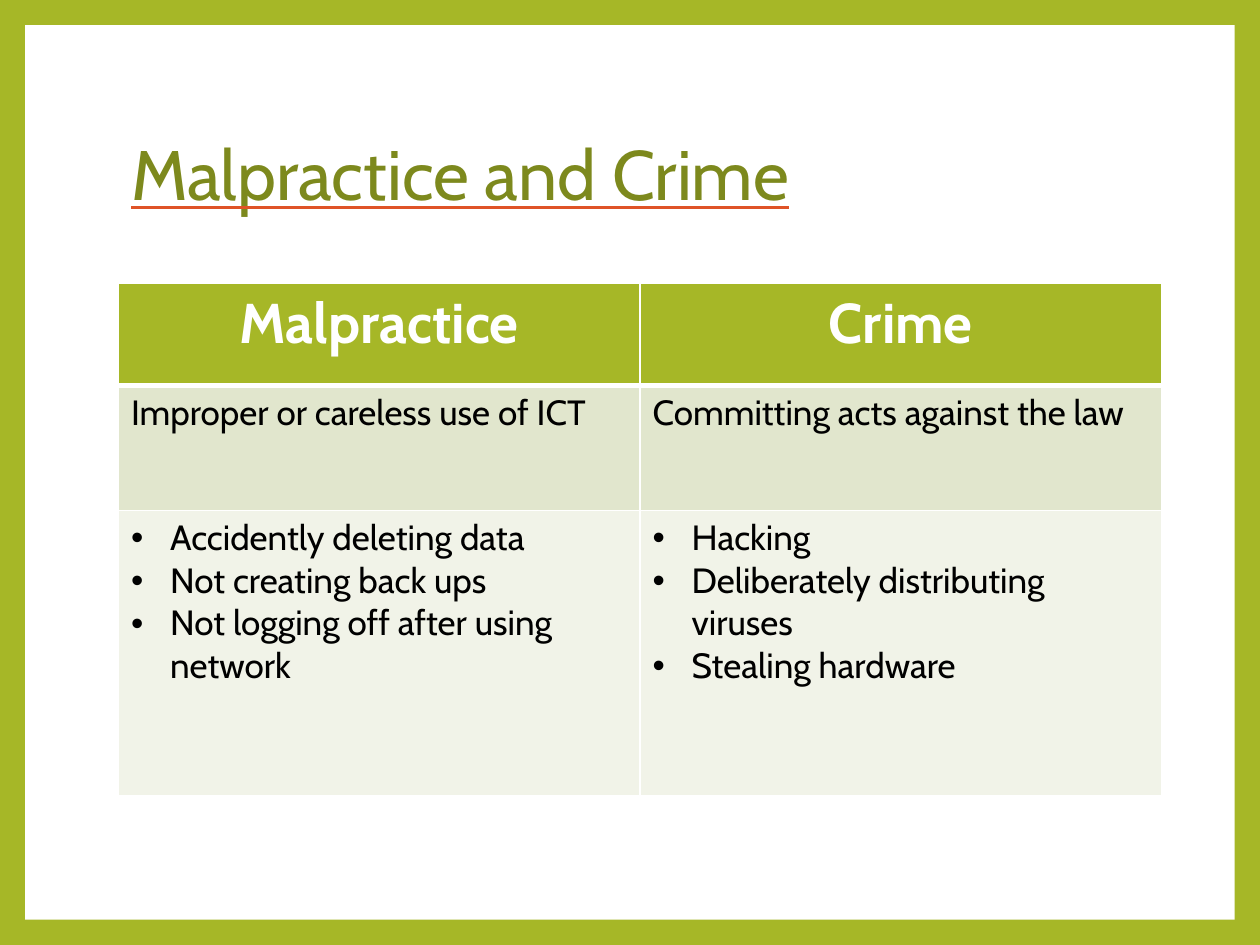
from dataclasses import dataclass

from lxml.etree import SubElement
from pptx import Presentation
from pptx.dml.color import RGBColor as Rgb
from pptx.enum.shapes import MSO_SHAPE as Shape
from pptx.enum.text import MSO_ANCHOR as Anchor, MSO_AUTO_SIZE as AutoSize, PP_ALIGN as Align
from pptx.oxml import parse_xml
from pptx.oxml.ns import nsdecls, qn
from pptx.util import Inches, Pt


@dataclass(frozen=True)
class Theme:
    """Colours, font and type sizes of the slide."""
    font: str = "Cabin"
    green: str = "A6B727"
    olive: str = "7D891D"
    orange: str = "DF5327"
    white: str = "FFFFFF"
    black: str = "000000"
    definition_fill: str = "E1E6CD"
    example_fill: str = "F1F3E8"
    title_size: int = 40
    header_size: int = 32
    body_size: int = 20


THEME = Theme()
HEADERS = ["Malpractice", "Crime"]
DEFINITIONS = ["Improper or careless use of ICT", "Committing acts against the law"]
EXAMPLES = [
    ["Accidently deleting data", "Not creating back ups", "Not logging off after using network"],
    ["Hacking", "Deliberately distributing viruses", "Stealing hardware"],
]


def paint(fill, colour):
    """Give a fill one solid colour."""
    fill.solid()
    fill.fore_color.rgb = Rgb.from_string(colour)


def add_run(paragraph, text, size, colour, bold=False):
    """Append a formatted run to a paragraph and return it."""
    run = paragraph.add_run()
    run.text = text
    run.font.name = THEME.font
    run.font.size = Pt(size)
    run.font.bold = bold
    run.font.color.rgb = Rgb.from_string(colour)
    return run


def add_frame(slide):
    """Set a white panel on the green background, behind the title."""
    paint(slide.background.fill, THEME.green)
    panel = slide.shapes.add_shape(
        Shape.RECTANGLE, Inches(0.2), Inches(0.2), Inches(9.6), Inches(7.1))
    panel.shadow.inherit = False
    paint(panel.fill, THEME.white)
    panel.line.fill.background()
    slide.shapes.title.element.addprevious(panel.element)


def write_title(slide, text):
    """Place the title and underline it in orange."""
    title = slide.shapes.title
    title.left, title.top = Inches(0.94), Inches(0.67)
    title.width, title.height = Inches(8.1), Inches(1.48)
    frame = title.text_frame
    frame.word_wrap = True
    frame.auto_size = AutoSize.NONE
    frame.vertical_anchor = Anchor.MIDDLE
    paragraph = frame.paragraphs[0]
    paragraph.alignment = Align.LEFT
    paragraph.line_spacing = 0.9
    run = add_run(paragraph, text, THEME.title_size, THEME.olive)
    run.font.underline = True
    underline = parse_xml(
        f'<a:uFill {nsdecls("a")}><a:solidFill><a:srgbClr val="{THEME.orange}"/>'
        '</a:solidFill></a:uFill>')
    run.font.fill
    run.font._element.find(qn("a:solidFill")).addnext(underline)


def add_bullet(paragraph):
    """Give a paragraph a hanging round bullet."""
    properties = paragraph._p.get_or_add_pPr()
    indent = Inches(0.31)
    properties.set("marL", str(indent))
    properties.set("indent", str(-indent))
    SubElement(properties, qn("a:buFont"), typeface="Arial")
    SubElement(properties, qn("a:buChar"), char="•")


def style_cell(cell, fill, top=1, bottom=1):
    """Draw white borders round a cell and fill it."""
    properties = cell._tc.get_or_add_tcPr()
    for side, width in {"L": 1, "R": 1, "T": top, "B": bottom}.items():
        border = SubElement(properties, qn(f"a:ln{side}"), w=str(Pt(width)))
        solid = SubElement(border, qn("a:solidFill"))
        SubElement(solid, qn("a:srgbClr"), val=THEME.white)
    paint(cell.fill, fill)


def write_examples(cell, examples):
    """List the examples as bullets in a cell."""
    frame = cell.text_frame
    for index, example in enumerate(examples):
        paragraph = frame.add_paragraph() if index else frame.paragraphs[0]
        add_bullet(paragraph)
        add_run(paragraph, example, THEME.body_size, THEME.black)


def add_comparison(slide):
    """Build the table that sets malpractice against crime."""
    table = slide.shapes.add_table(
        3, 2, Inches(0.94), Inches(2.25), Inches(8.28), Inches(4.07)).table
    for row, height in zip(table.rows, (0.81, 0.99, 2.27)):
        row.height = Inches(height)
    for column, content in enumerate(zip(HEADERS, DEFINITIONS, EXAMPLES)):
        header, definition, examples = content
        header_cell, definition_cell, example_cell = (
            table.cell(row, column) for row in range(3))
        style_cell(header_cell, THEME.green, bottom=3)
        style_cell(definition_cell, THEME.definition_fill, top=3)
        style_cell(example_cell, THEME.example_fill)
        heading = header_cell.text_frame.paragraphs[0]
        heading.alignment = Align.CENTER
        add_run(heading, header, THEME.header_size, THEME.white, bold=True)
        add_run(definition_cell.text_frame.paragraphs[0], definition,
                THEME.body_size, THEME.black)
        write_examples(example_cell, examples)


def main():
    """Build and save the slide."""
    deck = Presentation()
    deck.slide_width, deck.slide_height = Inches(10), Inches(7.5)
    slide = deck.slides.add_slide(deck.slide_layouts[5])
    add_frame(slide)
    write_title(slide, "Malpractice and Crime")
    add_comparison(slide)
    deck.save("out.pptx")


if __name__ == "__main__":
    main()
